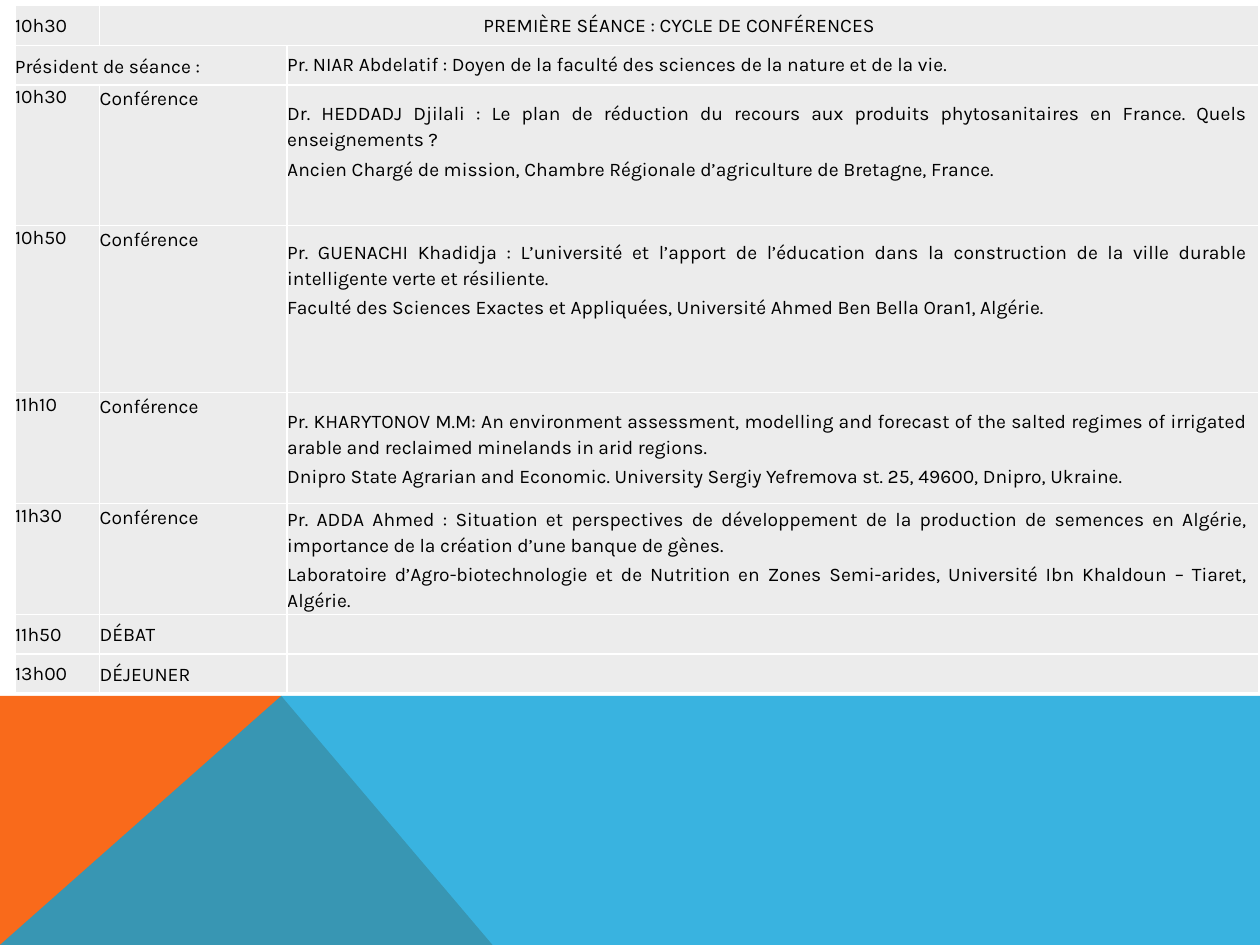
from dataclasses import dataclass

from lxml import etree
from pptx import Presentation
from pptx.dml.color import RGBColor
from pptx.enum.text import MSO_ANCHOR, PP_ALIGN
from pptx.oxml.ns import qn
from pptx.util import Cm, Pt

TOP, MIDDLE = MSO_ANCHOR.TOP, MSO_ANCHOR.MIDDLE
LEFT, CENTER, JUSTIFY = PP_ALIGN.LEFT, PP_ALIGN.CENTER, PP_ALIGN.JUSTIFY


@dataclass(frozen=True)
class Theme:
    font: str = "Karla"
    size: Pt = Pt(11)
    tight: Pt = Pt(13.5)
    loose: float = 1.15
    text: RGBColor = RGBColor(0, 0, 0)
    cell: RGBColor = RGBColor(0xEC, 0xEC, 0xEC)
    orange: RGBColor = RGBColor(0xF9, 0x6A, 0x1B)
    blue: RGBColor = RGBColor(0x08, 0xA1, 0xD9)
    border: str = "FFFFFF"


THEME = Theme()


def add_band(shapes, points, color):
    start, *others = [(Cm(x), Cm(y)) for x, y in points]
    builder = shapes.build_freeform(*start)
    builder.add_line_segments(others, close=True)
    band = builder.convert_to_shape()
    band.shadow.inherit = False
    band.fill.solid()
    band.fill.fore_color.rgb = color
    band.line.fill.background()
    return band


def write(cell, lines, spacing, before=0, after=0, align=LEFT, anchor=MIDDLE):
    cell.vertical_anchor = anchor
    cell.text = "\n".join(lines)
    for paragraph in cell.text_frame.paragraphs:
        paragraph.alignment = align
        paragraph.line_spacing = spacing
        paragraph.space_before = Pt(before)
        paragraph.space_after = Pt(after)
        paragraph.font.name = THEME.font
        paragraph.font.size = THEME.size
        paragraph.font.color.rgb = THEME.text


prs = Presentation()
prs.slide_width, prs.slide_height = Cm(25.4), Cm(19.05)
slide = prs.slides.add_slide(prs.slide_layouts[6])

add_band(slide.shapes, [(0, 19.05), (0, 14.03), (5.67, 14.03), (9.93, 19.05)], THEME.orange)
blue_band = add_band(
    slide.shapes, [(0, 19.05), (5.67, 14.03), (25.4, 14.03), (25.4, 19.05)], THEME.blue
)
blue_color = blue_band.fill._xPr.find(qn("a:solidFill"))[0]
etree.SubElement(blue_color, qn("a:alpha"), val="80000")

column_widths = [1.71, 3.78, 19.59]
row_heights = [0.82, 0.79, 2.84, 3.36, 2.24, 2.24, 0.79, 0.79]
schedule = slide.shapes.add_table(
    len(row_heights), len(column_widths), Cm(0.3), Cm(0.1),
    Cm(sum(column_widths)), Cm(sum(row_heights)),
).table
schedule.first_row = False
schedule.horz_banding = False
for column, width in zip(schedule.columns, column_widths):
    column.width = Cm(width)
for row, height in zip(schedule.rows, row_heights):
    row.height = Cm(height)

for cell in schedule.iter_cells():
    cell.margin_left = cell.margin_right = cell.margin_top = cell.margin_bottom = 0
    properties = cell._tc.get_or_add_tcPr()
    for side in ("lnL", "lnR", "lnT", "lnB"):
        border = etree.SubElement(properties, qn(f"a:{side}"), w=str(Pt(1)))
        border_fill = etree.SubElement(border, qn("a:solidFill"))
        etree.SubElement(border_fill, qn("a:srgbClr"), val=THEME.border)
    cell.fill.solid()
    cell.fill.fore_color.rgb = THEME.cell

schedule.cell(0, 1).merge(schedule.cell(0, 2))
schedule.cell(1, 0).merge(schedule.cell(1, 1))
write(schedule.cell(0, 0), ["10h30"], THEME.tight)
write(schedule.cell(0, 1), ["PREMIÈRE SÉANCE : CYCLE DE CONFÉRENCES"], THEME.tight, align=CENTER)
write(schedule.cell(1, 0), ["Président de séance :"], THEME.loose)
write(
    schedule.cell(1, 2),
    ["Pr. NIAR Abdelatif : Doyen de la faculté des sciences de la nature et de la vie."],
    Pt(12.8), before=1, after=1,
)

talks = [
    ("10h30", 1, 0.6, [
        "Dr. HEDDADJ Djilali : Le plan de réduction du recours aux produits "
        "phytosanitaires en France. Quels enseignements ?",
        "Ancien Chargé de mission, Chambre Régionale d’agriculture de Bretagne, France.",
    ]),
    ("10h50", 3, 1.2, [
        "Pr. GUENACHI Khadidja : L’université et l’apport de l’éducation dans la "
        "construction de la ville durable intelligente verte et résiliente.",
        "Faculté des Sciences Exactes et Appliquées, Université Ahmed Ben Bella Oran1, Algérie.",
    ]),
    ("11h10", 4, 0, [
        "Pr. KHARYTONOV M.M: An environment assessment, modelling and forecast of the "
        "salted regimes of irrigated arable and reclaimed minelands in arid regions.",
        "Dnipro State Agrarian and Economic. University Sergiy Yefremova st. 25, 49600, "
        "Dnipro, Ukraine.",
    ]),
    ("11h30", 4, 0, [
        "Pr. ADDA Ahmed : Situation et perspectives de développement de la production de "
        "semences en Algérie, importance de la création d’une banque de gènes.",
        "Laboratoire d’Agro-biotechnologie et de Nutrition en Zones Semi-arides, "
        "Université Ibn Khaldoun – Tiaret, Algérie.",
    ]),
]
for row, (time, before, space_below, talk) in enumerate(talks, start=2):
    write(schedule.cell(row, 0), [time], THEME.tight, before=before, anchor=TOP)
    write(schedule.cell(row, 1), ["Conférence"], THEME.loose, before=before, anchor=TOP)
    talk_cell = schedule.cell(row, 2)
    talk_cell.margin_right = Cm(0.22)
    talk_cell.margin_bottom = Cm(space_below)
    write(talk_cell, talk, THEME.loose, before=1, after=1, align=JUSTIFY)

closing = [("11h50", "DÉBAT", THEME.tight), ("13h00", "DÉJEUNER", THEME.loose)]
for row, (time, event, spacing) in enumerate(closing, start=6):
    write(schedule.cell(row, 0), [time], THEME.tight)
    write(schedule.cell(row, 1), [event], spacing)

prs.save("out.pptx")
